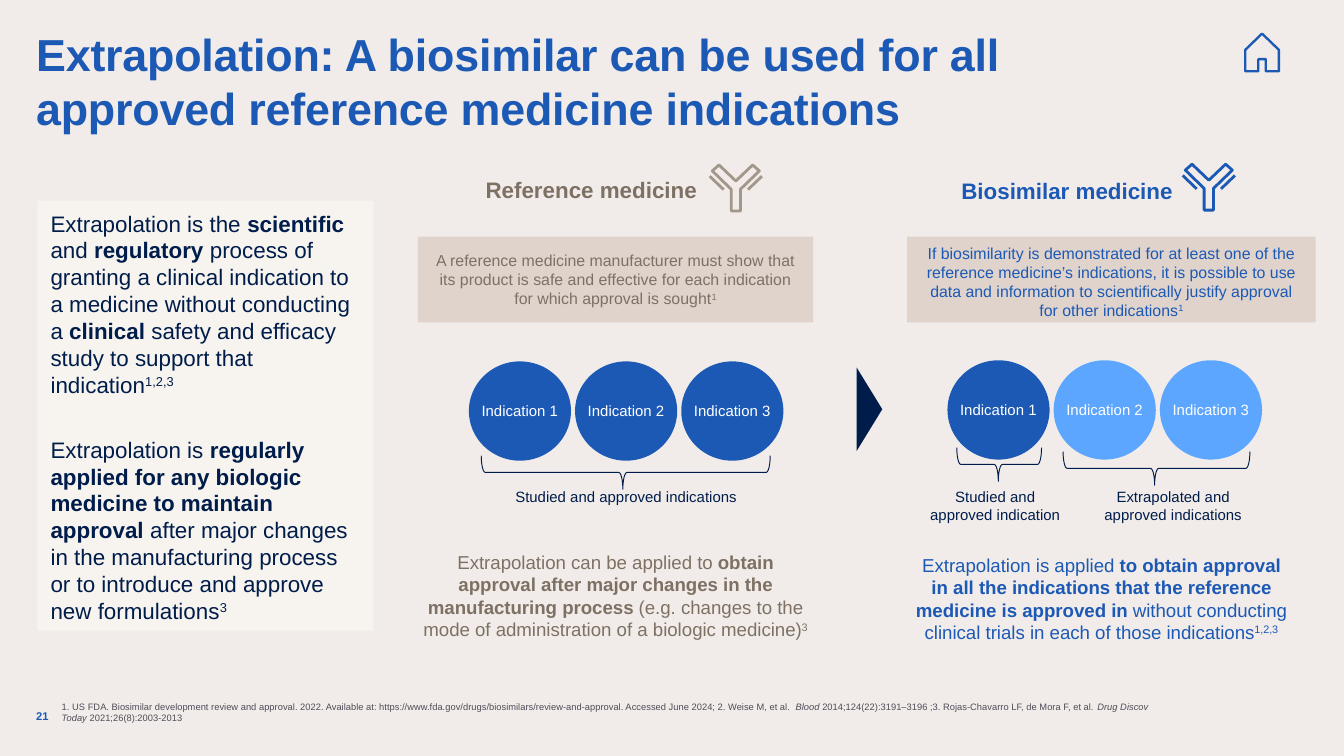
from dataclasses import dataclass
from typing import NamedTuple

from lxml.etree import SubElement
from pptx import Presentation
from pptx.dml.color import RGBColor
from pptx.enum.shapes import MSO_CONNECTOR as Connector, MSO_SHAPE as Preset
from pptx.enum.text import MSO_ANCHOR as Anchor, PP_ALIGN as Align
from pptx.oxml.ns import qn
from pptx.util import Pt


@dataclass(frozen=True)
class Theme:
    font: str = "Arial"
    page: str = "F1ECE9"
    card: str = "F7F4F0"
    panel: str = "DFD3CC"
    blue: str = "1C59B5"
    sky: str = "5DA6FF"
    navy: str = "001C4A"
    taupe: str = "7E7164"
    stone: str = "A3978B"
    grey: str = "4D4D57"
    white: str = "FFFFFF"
    title: float = 24
    heading: float = 12
    body: float = 10
    panel_text: float = 8.5
    label: float = 8
    number: float = 6
    footnote: float = 5


class Span(NamedTuple):
    text: str
    bold: bool = False
    italic: bool = False
    raised: bool = False


class Area(NamedTuple):
    left: float
    top: float
    width: float
    height: float

    def lengths(self) -> list:
        return [Pt(value) for value in self]


class Brace(NamedTuple):
    left: float
    top: float
    length: float
    caption: Area
    lines: list


@dataclass(frozen=True)
class Column:
    heading: str
    heading_area: Area
    icon_center: float
    icon_top: float
    ink: str
    icon_ink: str
    panel: list
    panel_area: Area
    panel_anchor: Anchor
    circles_left: float
    circles_top: float
    circle_fills: list
    braces: list
    summary: list
    summary_area: Area
    summary_insets: tuple


THEME = Theme()
DEFAULT_INSETS = (7.2, 3.6, 7.2, 3.6)
CIRCLE_STEP = 56.9
ANTIBODY = [(12.6, 3.2), (9, 0), (0, 8.6), (-9, 0), (-12.6, 3.2),
            (-2.5, 13), (-2.5, 24.6), (2.5, 24.6), (2.5, 13)]
HOUSE = [(0, 0), (9, 8.7), (9, 20.2), (2, 20.2), (2, 13.7),
         (-2, 13.7), (-2, 20.2), (-9, 20.2), (-9, 8.7)]

deck = Presentation()
deck.slide_width, deck.slide_height = Pt(720), Pt(405)
page = deck.slides.add_slide(deck.slide_layouts[6])
page.background.fill.solid()
page.background.fill.fore_color.rgb = RGBColor.from_string(THEME.page)


def write(box, paragraphs: list, *, size: float, color: str, bold: bool = False,
          align: Align = Align.LEFT, anchor: Anchor = Anchor.TOP,
          insets: tuple = (0, 0, 0, 0), wrap: bool = True,
          gap: float = 0, after: float = 0, tracking: int = 0) -> None:
    """Fill a shape with paragraphs, each a string or a list of spans."""
    frame = box.text_frame
    frame.word_wrap, frame.vertical_anchor = wrap, anchor
    (frame.margin_left, frame.margin_top,
     frame.margin_right, frame.margin_bottom) = [Pt(inset) for inset in insets]
    for index, content in enumerate(paragraphs):
        para = frame.add_paragraph() if index else frame.paragraphs[0]
        para.alignment, para.space_after = align, Pt(after)
        para.space_before = Pt(gap if index else 0)
        for part in [Span(content)] if isinstance(content, str) else content:
            span = para.add_run()
            span.text = part.text
            font = span.font
            font.name, font.size = THEME.font, Pt(size)
            font.bold, font.italic = bold or part.bold, part.italic
            font.color.rgb = RGBColor.from_string(color)
            if part.raised:
                span._r.get_or_add_rPr().set("baseline", "30000")
            if tracking:
                span._r.get_or_add_rPr().set("spc", str(tracking))


def add_text(area: Area, paragraphs: list, **style) -> None:
    write(page.shapes.add_textbox(*area.lengths()), paragraphs, **style)


def paint(shape, *, fill: str = "", line: str = "", weight: float = 1) -> None:
    shape.shadow.inherit = False
    if fill:
        shape.fill.solid()
        shape.fill.fore_color.rgb = RGBColor.from_string(fill)
    else:
        shape.fill.background()
    if line:
        shape.line.color.rgb = RGBColor.from_string(line)
        shape.line.width = Pt(weight)
    else:
        shape.line.fill.background()


def add_preset(preset: Preset, area: Area, *, rotation: float = 0, **style):
    shape = page.shapes.add_shape(preset, *area.lengths())
    shape.rotation = rotation
    paint(shape, **style)
    return shape


def add_outline(points: list, center: float, top: float, color: str, weight: float) -> None:
    corners = [(Pt(center + x), Pt(top + y)) for x, y in points]
    builder = page.shapes.build_freeform(*corners[0])
    builder.add_line_segments(corners[1:], close=True)
    paint(builder.convert_to_shape(), line=color, weight=weight)


def add_antibody(center: float, top: float, color: str) -> None:
    add_outline(ANTIBODY, center, top, color, 1.5)
    for side in (-1, 1):
        arm = page.shapes.add_connector(
            Connector.STRAIGHT, Pt(center + side * 14), Pt(top + 6),
            Pt(center + side * 6.5), Pt(top + 13.2))
        arm.line.color.rgb = RGBColor.from_string(color)
        arm.line.width = Pt(1.5)
        SubElement(arm._element.spPr, qn("a:effectLst"))


def add_brace(brace: Brace) -> None:
    """Draw a brace that opens upwards, with its caption below."""
    depth = 18
    shift = (brace.length - depth) / 2
    area = Area(brace.left + shift, brace.top - shift, depth, brace.length)
    shape = add_preset(Preset.LEFT_BRACE, area, rotation=270, line=THEME.navy, weight=0.5)
    shape.adjustments[0], shape.adjustments[1] = 0.12, 0.49
    add_text(brace.caption, brace.lines, size=THEME.label, color=THEME.navy, align=Align.CENTER)


def add_column(column: Column) -> None:
    add_text(column.heading_area, [column.heading], size=THEME.heading,
             color=column.ink, bold=True, align=Align.CENTER)
    add_antibody(column.icon_center, column.icon_top, column.icon_ink)
    panel = add_preset(Preset.RECTANGLE, column.panel_area, fill=THEME.panel)
    write(panel, [column.panel], size=THEME.panel_text, color=column.ink,
          align=Align.CENTER, anchor=column.panel_anchor, insets=DEFAULT_INSETS)
    for index, fill in enumerate(column.circle_fills):
        area = Area(column.circles_left + index * CIRCLE_STEP, column.circles_top, 54.7, 53.2)
        write(add_preset(Preset.OVAL, area, fill=fill), [f"Indication {index + 1}"],
              size=THEME.label, color=THEME.white, align=Align.CENTER,
              anchor=Anchor.MIDDLE, wrap=False)
    for brace in column.braces:
        add_brace(brace)
    add_text(column.summary_area, [column.summary], size=THEME.body, color=column.ink,
             align=Align.CENTER, insets=column.summary_insets)


COLUMNS = [
    Column("Reference medicine", Area(254.9, 94.3, 123.8, 14.4), 394.2, 88.4,
           THEME.taupe, THEME.stone,
           [Span("A reference medicine manufacturer must show that its product is safe and "
                 "effective for each indication for which approval is sought"),
            Span("1", raised=True)],
           Area(223.9, 126.7, 211.7, 46), Anchor.MIDDLE, 251.2, 193.6, [THEME.blue] * 3,
           [Brace(257.8, 244.1, 154.8, Area(267.8, 261.4, 135.4, 9.4),
                  ["Studied and approved indications"])],
           [Span("Extrapolation can be applied to "),
            Span("obtain approval after major changes in the manufacturing process ", bold=True),
            Span("(e.g. changes to the mode of administration of a biologic medicine)"),
            Span("3", raised=True)],
           Area(223.9, 291.6, 211.7, 55.4), (0, 3.6, 0, 3.6)),
    Column("Biosimilar medicine", Area(509.8, 95, 123.8, 14.4), 647.6, 88,
           THEME.blue, THEME.blue,
           [Span("If biosimilarity is demonstrated for at least one of the reference medicine’s "
                 "indications, it is possible to use data and information to scientifically "
                 "justify approval for other indications"),
            Span("1", raised=True)],
           Area(486, 126.7, 218.9, 46), Anchor.TOP, 507.6, 193,
           [THEME.blue, THEME.sky, THEME.sky],
           [Brace(512.6, 239.8, 45.4, Area(490.3, 261.4, 85.7, 19.4),
                  ["Studied and", "approved indication"]),
            Brace(569.5, 241.9, 100.1, Area(579.6, 261.4, 97.9, 19.4),
                  ["Extrapolated and", "approved indications"])],
           [Span("Extrapolation is applied "),
            Span("to obtain approval in all the indications that the reference medicine "
                 "is approved in ", bold=True),
            Span("without conducting clinical trials in each of those indications"),
            Span("1,2,3", raised=True)],
           Area(482.4, 293, 215.3, 55.4), DEFAULT_INSETS),
]
DEFINITION = [
    [Span("Extrapolation is the "), Span("scientific", bold=True), Span(" and "),
     Span("regulatory", bold=True),
     Span(" process of granting a clinical indication to a medicine without conducting a "),
     Span("clinical", bold=True), Span(" safety and efficacy study to support that indication"),
     Span("1,2,3", raised=True)],
    [Span("Extrapolation is "),
     Span("regularly applied for any biologic medicine to maintain approval ", bold=True),
     Span("after major changes in the manufacturing process or to introduce and approve "
          "new formulations"), Span("3", raised=True)],
]
REFERENCES = [
    Span("1. US FDA. Biosimilar development review and approval. 2022. Available at: "
         "https://www.fda.gov/drugs/biosimilars/review-and-approval. Accessed June 2024; "
         "2. Weise M, et al. "),
    Span("Blood", italic=True),
    Span(" 2014;124(22):3191–3196 ;3. Rojas-Chavarro LF, de Mora F, et al. "),
    Span("Drug Discov Today", italic=True), Span(" 2021;26(8):2003-2013"),
]

add_outline(HOUSE, 676.1, 18, THEME.blue, 1.25)
add_text(Area(19.4, 14.4, 576, 89.3),
         ["Extrapolation: A biosimilar can be used for all approved reference medicine indications"],
         size=THEME.title, color=THEME.blue, bold=True, tracking=-10)
add_text(Area(33.1, 360, 583.2, 31), [REFERENCES], size=THEME.footnote, color=THEME.grey,
         anchor=Anchor.BOTTOM, insets=(0, 0, 0, 3.6))
add_text(Area(19.4, 380.2, 11.5, 10.8), ["21"], size=THEME.number, color=THEME.blue, bold=True)
add_preset(Preset.RECTANGLE, Area(20, 107.5, 180, 230.4), fill=THEME.card)
add_text(Area(20, 105.1, 180, 251.3), DEFINITION, size=THEME.heading, color=THEME.navy,
         insets=(7.2,) * 4, gap=17.4, after=3)
add_preset(Preset.ISOSCELES_TRIANGLE, Area(443.5, 212.4, 44.6, 13.7),
           rotation=90, fill=THEME.navy)
for column in COLUMNS:
    add_column(column)
deck.save("out.pptx")
